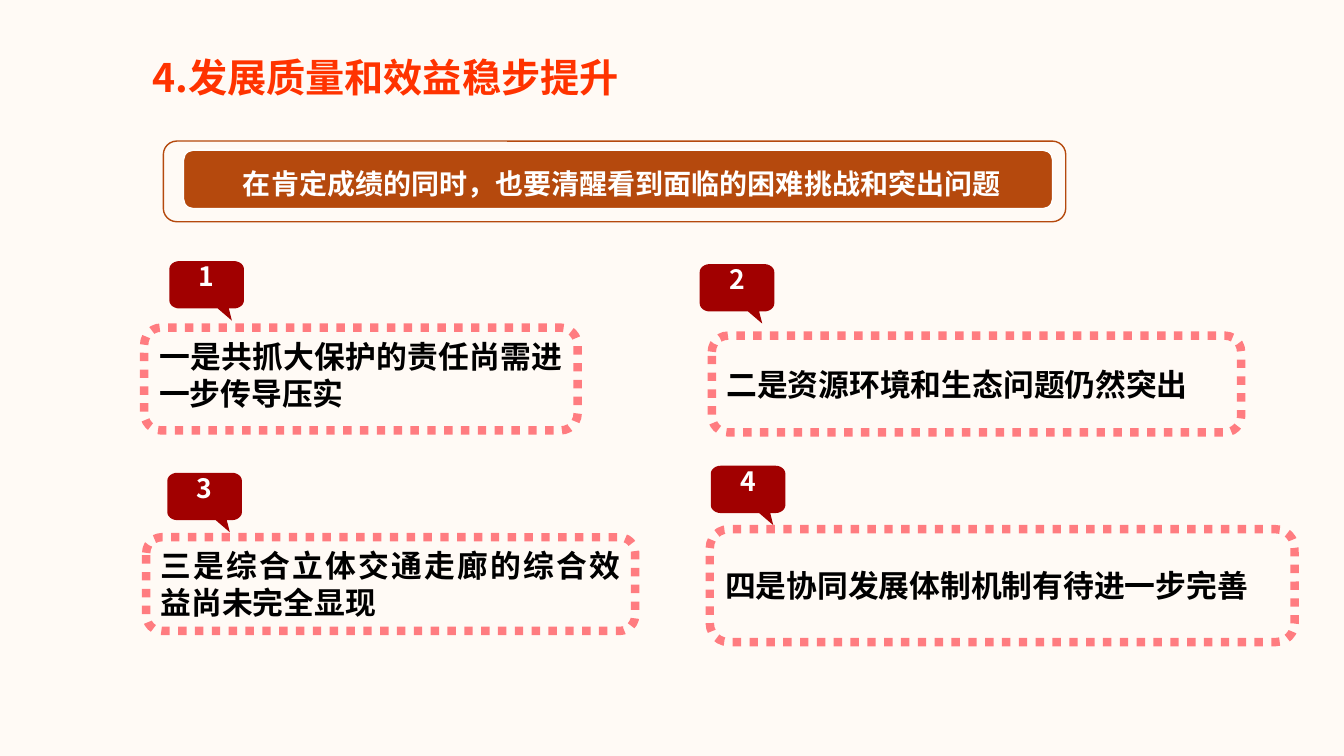
import math
from pptx import Presentation
from pptx import util as u
from pptx.dml.color import RGBColor
from pptx.enum import dml, shapes, text
from pptx.oxml.ns import qn

FONT = "Noto Sans CJK SC"
ROUNDED = shapes.MSO_SHAPE.ROUNDED_RECTANGLE
PROBLEMS = [
    ("1", (1.68, 2.59), (1.43, 3.25, 4.3, 1.02), "TOP", "一是共抓大保护的责任尚需进一步传导压实"),
    ("2", (6.94, 2.62), (7.06, 3.33, 5.25, 0.96), "MIDDLE", "二是资源环境和生态问题仍然突出"),
    ("3", (1.66, 4.69), (1.45, 5.33, 4.85, 0.93), "TOP", "三是综合立体交通走廊的综合效益尚未完全显现"),
    ("4", (7.05, 4.62), (7.04, 5.25, 5.8, 1.12), "MIDDLE", "四是协同发展体制机制有待进一步完善"),
]


def color(hex_value):
    return RGBColor.from_string(hex_value)


def place(box):
    return [u.Inches(length) for length in box]


def write(shape, wording, size, hex_value, align="LEFT", anchor="TOP",
          spacing=1.0, insets=(0.1, 0.05, 0.1, 0.05)):
    frame = shape.text_frame
    frame.word_wrap = True
    frame.auto_size = text.MSO_AUTO_SIZE.NONE
    frame.vertical_anchor = text.MSO_ANCHOR[anchor]
    (frame.margin_left, frame.margin_top,
     frame.margin_right, frame.margin_bottom) = place(insets)
    paragraph = frame.paragraphs[0]
    paragraph.alignment = text.PP_ALIGN[align]
    paragraph.line_spacing = spacing
    paragraph.space_before = u.Pt(0)
    run = paragraph.add_run()
    run.text = wording
    run.font.name = FONT
    run.font.size = u.Pt(size)
    run.font.bold = True
    run.font.color.rgb = color(hex_value)
    east_asian = run._r.get_or_add_rPr().makeelement(qn("a:ea"), {"typeface": FONT})
    run.font._element.find(qn("a:latin")).addnext(east_asian)


def paint(shape, fill=None, line=None, width=1):
    shape.shadow.inherit = False
    if fill:
        shape.fill.solid()
        shape.fill.fore_color.rgb = color(fill)
    else:
        shape.fill.background()
    if line:
        shape.line.color.rgb = color(line)
        shape.line.width = u.Pt(width)
    else:
        shape.line.fill.background()


def rounded_box(parent, box, **style):
    shape = parent.add_shape(ROUNDED, *place(box))
    paint(shape, **style)
    return shape


def corner(center_x, center_y, start):
    angles = [math.radians(start + step * 15) for step in range(7)]
    return [(center_x + 0.1 * math.cos(a), center_y + 0.08 * math.sin(a)) for a in angles]


def add_badge(slide, left, top, number):
    tail = [(0.59, 0.47), (0.62, 0.59), (0.48, 0.47)]
    outline = (corner(0.1, 0.08, 180) + corner(0.64, 0.08, 270)
               + corner(0.64, 0.39, 0) + tail + corner(0.1, 0.39, 90))
    points = [place((left + x, top + y)) for x, y in outline]
    builder = slide.shapes.build_freeform(*points[0])
    builder.add_line_segments(points[1:], close=True)
    badge = builder.convert_to_shape()
    paint(badge, fill="A10000")
    write(badge, number, 19, "FFFFFF", "CENTER", "MIDDLE", 0.8, (0.1, 0.05, 0.1, 0.28))


def add_problem(slide, number, badge_at, box, anchor, wording):
    add_badge(slide, *badge_at, number)
    card = rounded_box(slide.shapes, box, line="FF7C80", width=6)
    card.line.dash_style = dml.MSO_LINE.ROUND_DOT
    write(card, wording, 22, "000000", "JUSTIFY", anchor)


def add_banner(slide, wording):
    banner = slide.shapes.add_group_shape().shapes
    rounded_box(banner, (1.62, 1.4, 8.95, 0.8), line="B5490D")
    rounded_box(banner, (1.82, 1.49, 8.62, 0.58), fill="B5490D", line="FFFFFF")
    caption = banner.add_textbox(*place((1.88, 1.54, 8.69, 0.77)))
    write(caption, wording, 20, "FFFFFF", spacing=u.Pt(32), insets=(0, 0, 0.1, 0))
    caption.text_frame.paragraphs[0]._p.get_or_add_pPr().set("indent", str(u.Inches(0.53)))


def add_title(slide, wording):
    title = slide.shapes.title
    title.left, title.top, title.width, title.height = place((1.41, 0.29, 7.59, 0.72))
    write(title, wording, 28, "FF3300", anchor="MIDDLE", spacing=1.5)


def main():
    deck = Presentation()
    deck.slide_width, deck.slide_height = place((13.33, 7.5))
    slide = deck.slides.add_slide(deck.slide_layouts[5])
    slide.background.fill.solid()
    slide.background.fill.fore_color.rgb = color("FFFAF5")
    add_title(slide, "4.发展质量和效益稳步提升")
    for problem in PROBLEMS:
        add_problem(slide, *problem)
    add_banner(slide, "在肯定成绩的同时，也要清醒看到面临的困难挑战和突出问题")
    deck.save("out.pptx")


if __name__ == "__main__":
    main()
